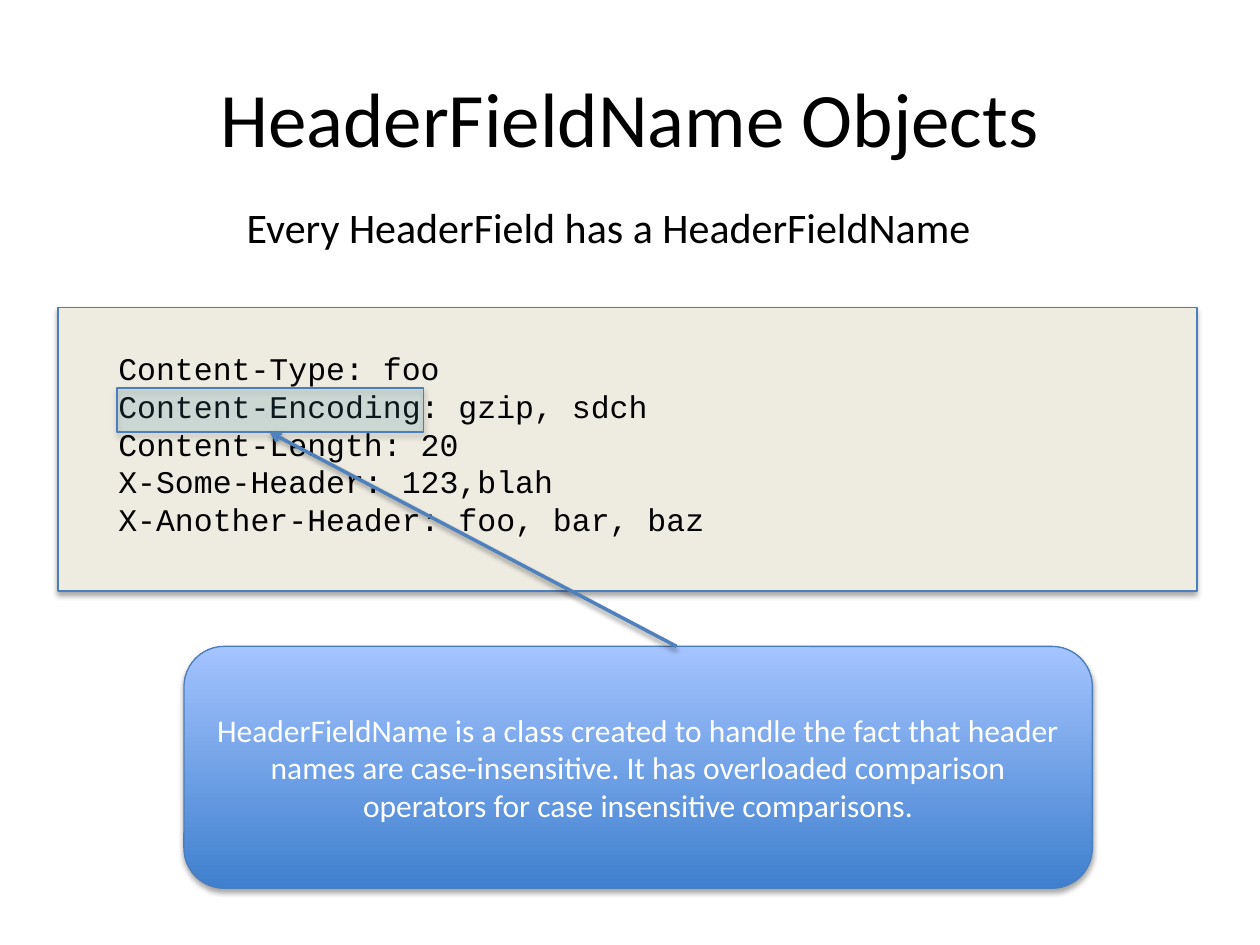
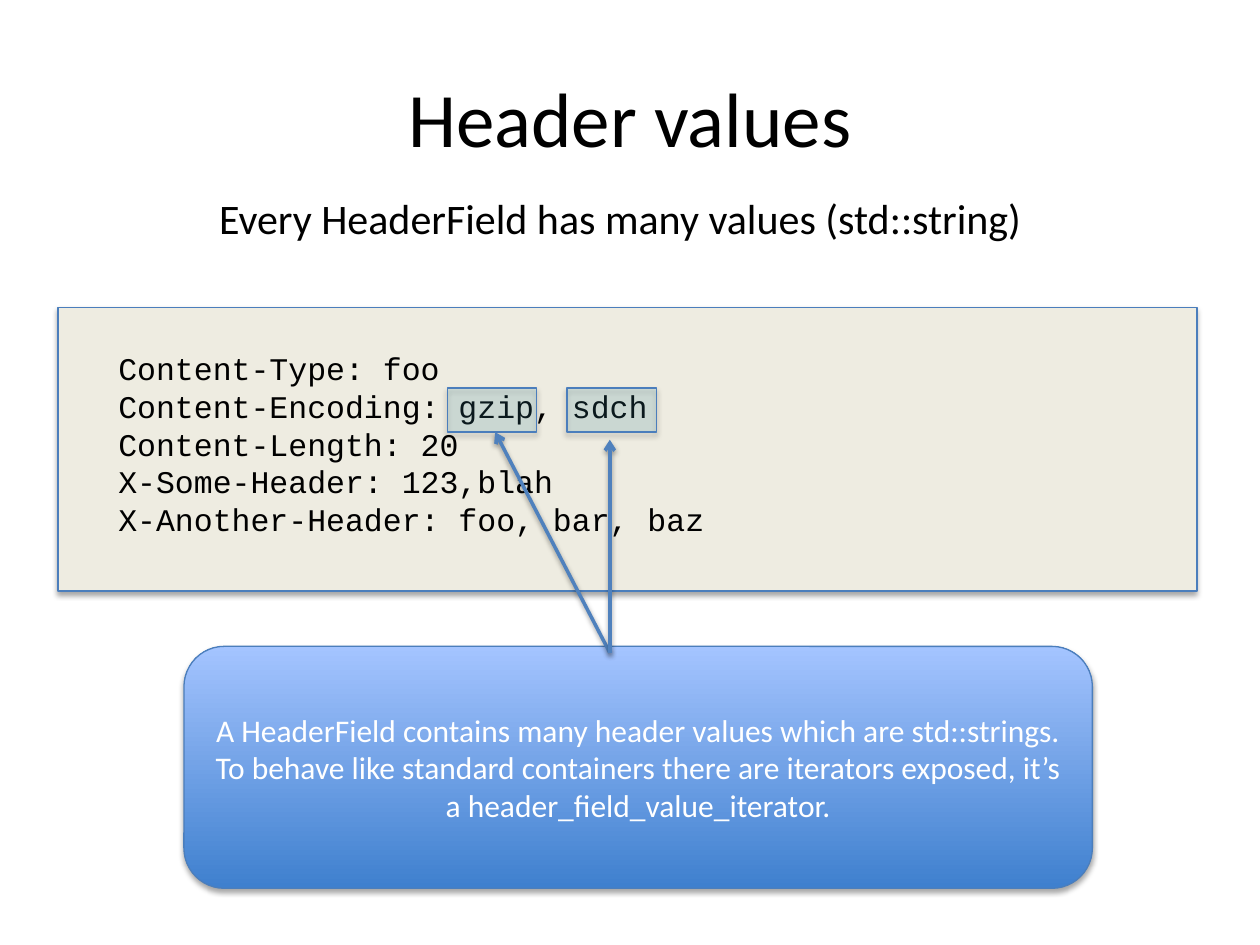
from lxml import etree
from pptx import Presentation
from pptx.dml.color import RGBColor
from pptx.enum import shapes, text
from pptx.oxml import ns
from pptx.util import Inches, Pt

BLACK, WHITE, EDGE, ARROW = "000000", "FFFFFF", "4B7EBC", "4F81BD"
SAND, TEAL, DEEP, PALE = "EEECE1", "4BACC6", "3F80CE", "A4C4FF"
BODY, MONO = "Calibri", "Courier New"
KIND = shapes.MSO_SHAPE

TITLE = (0.5, 0.3, 9, 1.25)
PANEL = (0.46, 2.44, 9.04, 2.25)
NOTE = (1.46, 5.13, 7.21, 1.92)
MARK_TOP, MARK_TALL = 3.08, 0.35
HEADERS = [
    "Content-Type: foo",
    "Content-Encoding: gzip, sdch",
    "Content-Length: 20",
    "X-Some-Header: 123,blah",
    "X-Another-Header: foo, bar, baz",
]


def rgb(code):
    return RGBColor.from_string(code)


def inches(box):
    return [Inches(n) for n in box]


def add_tag(parent, tag, **attrs):
    return etree.SubElement(parent, ns.qn(tag), attrs)


def cast_shadow(item, alpha, dist):
    """Soft shadow straight below; call after the line is set."""
    effects = add_tag(item._element.spPr, "a:effectLst")
    outer = add_tag(effects, "a:outerShdw", blurRad=str(Pt(3.1)),
                    dist=str(Pt(dist)), dir="5400000", rotWithShape="0")
    tint = add_tag(outer, "a:srgbClr", val=BLACK)
    add_tag(tint, "a:alpha", val=str(alpha * 1000))


def write(frame, lines, size, font, color, align=None):
    frame.text = "\n".join(lines)
    for para in frame.paragraphs:
        para.font.size = Pt(size)
        para.font.name = font
        para.font.color.rgb = rgb(color)
        para.alignment = align


def add_label(slide, box, lines, size, font, wrap):
    frame = slide.shapes.add_textbox(*inches(box)).text_frame
    write(frame, lines, size, font, BLACK)
    frame.word_wrap = wrap
    frame.auto_size = text.MSO_AUTO_SIZE.SHAPE_TO_FIT_TEXT


def add_box(slide, box, kind=KIND.RECTANGLE, fill=None, alpha=None):
    shape = slide.shapes.add_shape(kind, *inches(box))
    if fill:
        shape.fill.solid()
        shape.fill.fore_color.rgb = rgb(fill)
    else:
        shape.fill.gradient()
        shape.fill.gradient_angle = 90
        for stop, code in zip(shape.fill.gradient_stops, (DEEP, PALE)):
            stop.color.rgb = rgb(code)
    if alpha:
        tint = shape._element.spPr.find(".//" + ns.qn("a:srgbClr"))
        add_tag(tint, "a:alpha", val=str(alpha * 1000))
    shape.line.color.rgb = rgb(EDGE)
    shape.line.width = Pt(0.75)
    cast_shadow(shape, 35, 1.8)
    return shape


def add_title(slide, box, words):
    title = slide.shapes.title
    title.left, title.top, title.width, title.height = inches(box)
    write(title.text_frame, [words], 44, BODY, BLACK, text.PP_ALIGN.CENTER)
    title.text_frame.vertical_anchor = text.MSO_ANCHOR.MIDDLE


def add_panel(slide, box):
    """Code panel with the header lines inset."""
    add_box(slide, box, fill=SAND)
    left, top = box[:2]
    add_label(slide, (left + 0.38, top + 0.28, 4.88, 1.62),
              HEADERS, 18, MONO, True)


def add_note(slide, box, words):
    note = add_box(slide, box, KIND.ROUNDED_RECTANGLE)
    write(note.text_frame, [words], 18, BODY, WHITE, text.PP_ALIGN.CENTER)
    note.text_frame.word_wrap = True
    note.text_frame.vertical_anchor = text.MSO_ANCHOR.MIDDLE


def add_mark(slide, left, wide, start, end):
    """Highlight on the second header line, and the arrow to it."""
    add_box(slide, (left, MARK_TOP, wide, MARK_TALL), fill=TEAL, alpha=15)
    line = slide.shapes.add_connector(
        shapes.MSO_CONNECTOR.STRAIGHT, *inches(start + end))
    line.line.color.rgb = rgb(ARROW)
    line.line.width = Pt(2)
    add_tag(line.line._get_or_add_ln(), "a:tailEnd", type="arrow")
    cast_shadow(line, 38, 1.6)


def add_page(deck, title, lead, lead_box, note, marks):
    slide = deck.slides.add_slide(deck.slide_layouts[5])
    add_title(slide, TITLE, title)
    add_panel(slide, PANEL)
    add_note(slide, NOTE, note)
    for mark in marks:
        add_mark(slide, *mark)
    add_label(slide, lead_box, [lead], 24, BODY, False)


def main():
    deck = Presentation()
    deck.slide_width, deck.slide_height = Inches(10), Inches(7.5)

    # Field names
    add_page(
        deck, "HeaderFieldName Objects",
        "Every HeaderField has a HeaderFieldName", (1.86, 1.55, 6.01, 0.5),
        "HeaderFieldName is a class created to handle the fact that header "
        "names are case-insensitive. It has overloaded comparison operators "
        "for case insensitive comparisons.",
        [(0.93, 2.43, (5.37, 5.13), (2.14, 3.43))])

    # Field values
    fork = (4.84, 5.18)
    add_page(
        deck, "Header values",
        "Every HeaderField has many values (std::string)",
        (1.64, 1.48, 6.66, 0.5),
        "A HeaderField contains many header values which are std::strings. "
        "To behave like standard containers there are iterators exposed, "
        "it’s a header_field_value_iterator.",
        [(3.55, 0.71, fork, (3.93, 3.43)), (4.5, 0.71, fork, (4.84, 3.49))])

    deck.save("out.pptx")


if __name__ == "__main__":
    main()
